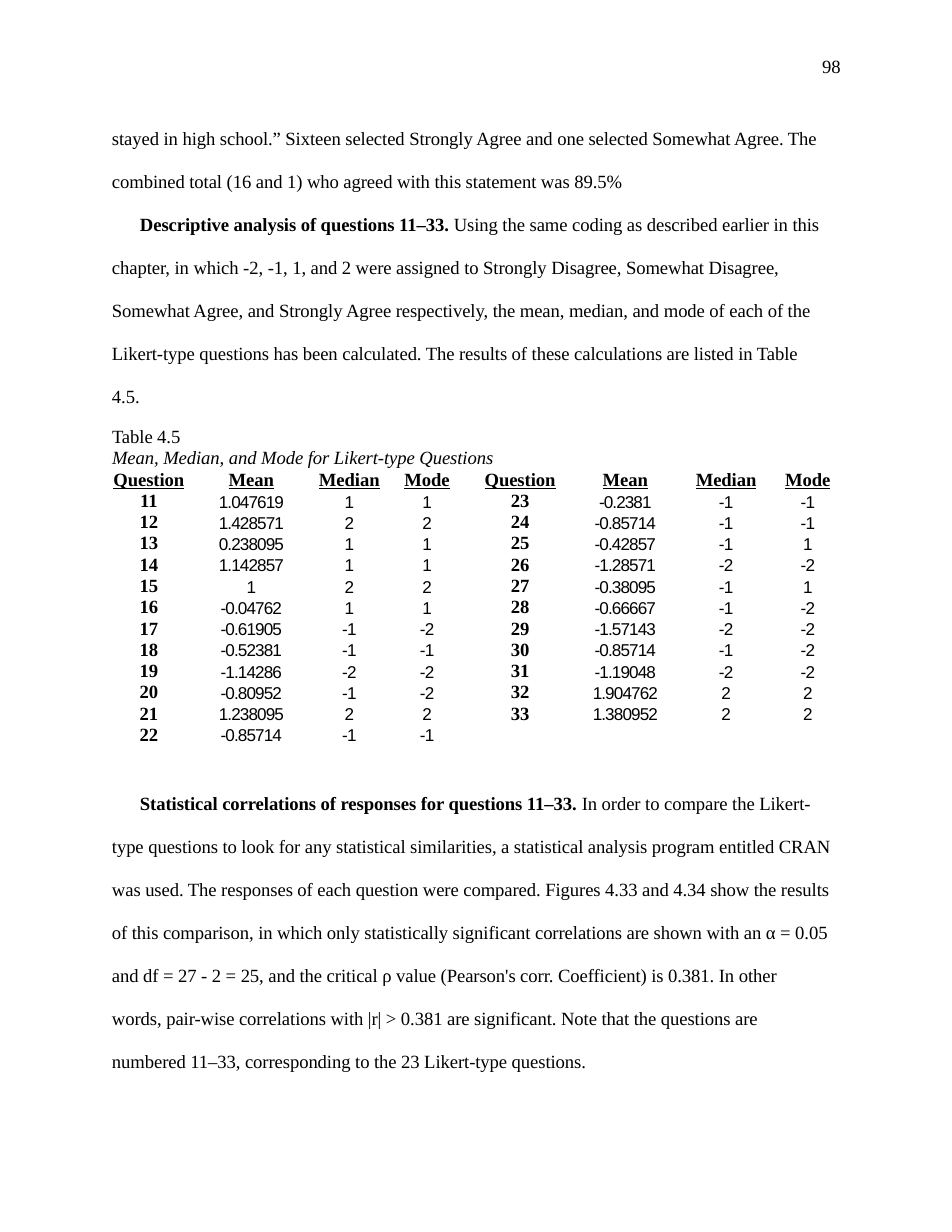
from pptx import Presentation
from pptx.dml.color import RGBColor
from pptx.enum.text import MSO_ANCHOR, PP_ALIGN
from pptx.util import Inches, Pt

SERIF, SANS = "Times New Roman", "Arial"
HEADINGS = ["Question", "Mean", "Median", "Mode"] * 2
COLUMN_WIDTHS = [0.94, 0.89, 0.79, 0.67, 0.98, 0.91, 0.84, 0.67]
COLUMN_INDENTS = [0, 0, 0.07, 0, 0.01, 0, 0.05, 0]
CAPTION_HEIGHT, ROW_HEIGHT = 0.38, 0.19
FIRST_QUESTION, ROWS_PER_HALF = 11, 12
# Mean, median and mode of questions 11 to 33, in order
STATISTICS = [
    ("1.047619", "1", "1"), ("1.428571", "2", "2"), ("0.238095", "1", "1"),
    ("1.142857", "1", "1"), ("1", "2", "2"), ("-0.04762", "1", "1"),
    ("-0.61905", "-1", "-2"), ("-0.52381", "-1", "-1"), ("-1.14286", "-2", "-2"),
    ("-0.80952", "-1", "-2"), ("1.238095", "2", "2"), ("-0.85714", "-1", "-1"),
    ("-0.2381", "-1", "-1"), ("-0.85714", "-1", "-1"), ("-0.42857", "-1", "1"),
    ("-1.28571", "-2", "-2"), ("-0.38095", "-1", "1"), ("-0.66667", "-1", "-2"),
    ("-1.57143", "-2", "-2"), ("-0.85714", "-1", "-2"), ("-1.19048", "-2", "-2"),
    ("1.904762", "2", "2"), ("1.380952", "2", "2"),
]


def color(hex_string):
    return RGBColor.from_string(hex_string)


def add_text(paragraph, text, font=SERIF, size=12, bold=False, italic=False,
             underline=False, spacing=-0.05, fill="000000"):
    """Append formatted text; each newline becomes a line break."""
    for index, line in enumerate(text.split("\n")):
        if index:
            paragraph.add_line_break()
        run = paragraph.add_run()
        run.text = line
        run.font.name = font
        run.font.size = Pt(size)
        run.font.bold = bold
        run.font.italic = italic
        run.font.underline = underline
        run.font.color.rgb = color(fill)
        run._r.get_or_add_rPr().set("spc", str(round(spacing * 100)))


def format_paragraph(paragraph, left=0, first=0, line_spacing=None, before=None, align=None):
    properties = paragraph._p.get_or_add_pPr()
    properties.set("marL", str(Inches(left)))
    properties.set("indent", str(Inches(first)))
    paragraph.line_spacing = line_spacing
    paragraph.space_before = before
    paragraph.alignment = align


class Page:
    body_spacing = 1.92
    row_spacing = Pt(12.8)

    def __init__(self, slide):
        self.slide = slide

    def text_box(self, left, top, width, height, paragraphs):
        """Add a box of (runs, paragraph format) pairs; a run is (text, bold)."""
        shape = self.slide.shapes.add_textbox(
            Inches(left), Inches(top), Inches(width), Inches(height))
        frame = shape.text_frame
        frame.word_wrap = True
        frame.margin_left = frame.margin_right = frame.margin_bottom = 0
        frame.margin_top = Inches(0.02)
        for index, (runs, layout) in enumerate(paragraphs):
            paragraph = frame.add_paragraph() if index else frame.paragraphs[0]
            format_paragraph(paragraph, **layout)
            for text, bold in runs:
                add_text(paragraph, text, bold=bold)

    def table(self, left, top, rows, widths):
        shape = self.slide.shapes.add_table(
            rows, len(widths), Inches(left), Inches(top), Inches(sum(widths)),
            Inches(CAPTION_HEIGHT + ROW_HEIGHT * (rows - 1)))
        table = shape.table
        table.first_row = table.horz_banding = False
        for column, width in zip(table.columns, widths):
            column.width = Inches(width)
        for index, row in enumerate(table.rows):
            row.height = Inches(ROW_HEIGHT if index else CAPTION_HEIGHT)
        for cell in table.iter_cells():
            cell.fill.background()
            cell.margin_left = cell.margin_right = cell.margin_top = cell.margin_bottom = 0
            cell.vertical_anchor = MSO_ANCHOR.TOP
            format_paragraph(cell.text_frame.paragraphs[0], line_spacing=self.row_spacing)
        return table

    def caption(self, table, number, title):
        cell = table.cell(0, 0)
        cell.merge(table.cell(0, len(table.columns) - 1))
        frame = cell.text_frame
        format_paragraph(frame.paragraphs[0], left=0.14, line_spacing=self.row_spacing)
        add_text(frame.paragraphs[0], number)
        paragraph = frame.add_paragraph()
        format_paragraph(paragraph, left=0.14, line_spacing=Pt(13.7))
        add_text(paragraph, title, italic=True)

    def cell(self, table, row, column, text, **style):
        paragraph = table.cell(row, column).text_frame.paragraphs[0]
        format_paragraph(paragraph, left=COLUMN_INDENTS[column],
                         line_spacing=self.row_spacing, align=PP_ALIGN.CENTER)
        add_text(paragraph, text, **style)


def main():
    presentation = Presentation()
    presentation.slide_width = Inches(8.5)
    presentation.slide_height = Inches(11)
    page = Page(presentation.slides.add_slide(presentation.slide_layouts[6]))
    body = {"left": 0.01, "line_spacing": page.body_spacing}

    page.text_box(0.99, 0.47, 6.53, 3.17, [
        ([("98", False)], {"left": 6.35}),
        ([("stayed in high school.” Sixteen selected Strongly Agree and one selected "
           "Somewhat Agree. The combined total (16 and 1) who agreed with this "
           "statement was 89.5%", False)], {**body, "before": Pt(18.5)}),
        ([("Descriptive analysis of questions 11–33. ", True),
          ("Using the same coding as described earlier in this chapter, in which "
           "-2, -1, 1, and 2 were assigned to Strongly Disagree, Somewhat Disagree, "
           "Somewhat Agree, and Strongly Agree respectively, the mean, median, and "
           "mode of each of the Likert-type questions has been calculated. The "
           "results of these calculations are listed in Table\n4.5.", False)],
         {**body, "first": 0.25}),
    ])

    table = page.table(0.86, 3.82, ROWS_PER_HALF + 2, COLUMN_WIDTHS)
    page.caption(table, "Table 4.5", "Mean, Median, and Mode for Likert-type Questions")
    for column, heading in enumerate(HEADINGS):
        page.cell(table, 1, column, heading, bold=True, underline=True)
    for index, values in enumerate(STATISTICS):
        half, row = divmod(index, ROWS_PER_HALF)
        page.cell(table, row + 2, half * 4, str(FIRST_QUESTION + index), bold=True, spacing=0)
        for offset, value in enumerate(values, start=1):
            page.cell(table, row + 2, half * 4 + offset, value, font=SANS, size=11,
                      spacing=-0.6 if offset == 1 else -0.5)

    page.text_box(0.99, 7.05, 6.53, 2.53, [
        ([("Statistical correlations of responses for questions 11–33. ", True),
          ("In order to compare the Likert-", False)], {"left": 0.26}),
        ([("type questions to look for any statistical similarities, a statistical "
           "analysis program entitled CRAN was used. The responses of each question "
           "were compared. Figures 4.33 and 4.34 show the results", False)], body),
        ([("of this comparison, in which only statistically significant correlations "
           "are shown with an α = 0.05 and df = 27 - 2 = 25, and the critical ρ value "
           "(Pearson's corr. Coefficient) is 0.381. In other\nwords, pair-wise "
           "correlations with |r| > 0.381 are significant. Note that the questions "
           "are\nnumbered 11–33, corresponding to the 23 Likert-type questions.",
           False)], body),
    ])
    presentation.save("out.pptx")


if __name__ == "__main__":
    main()
